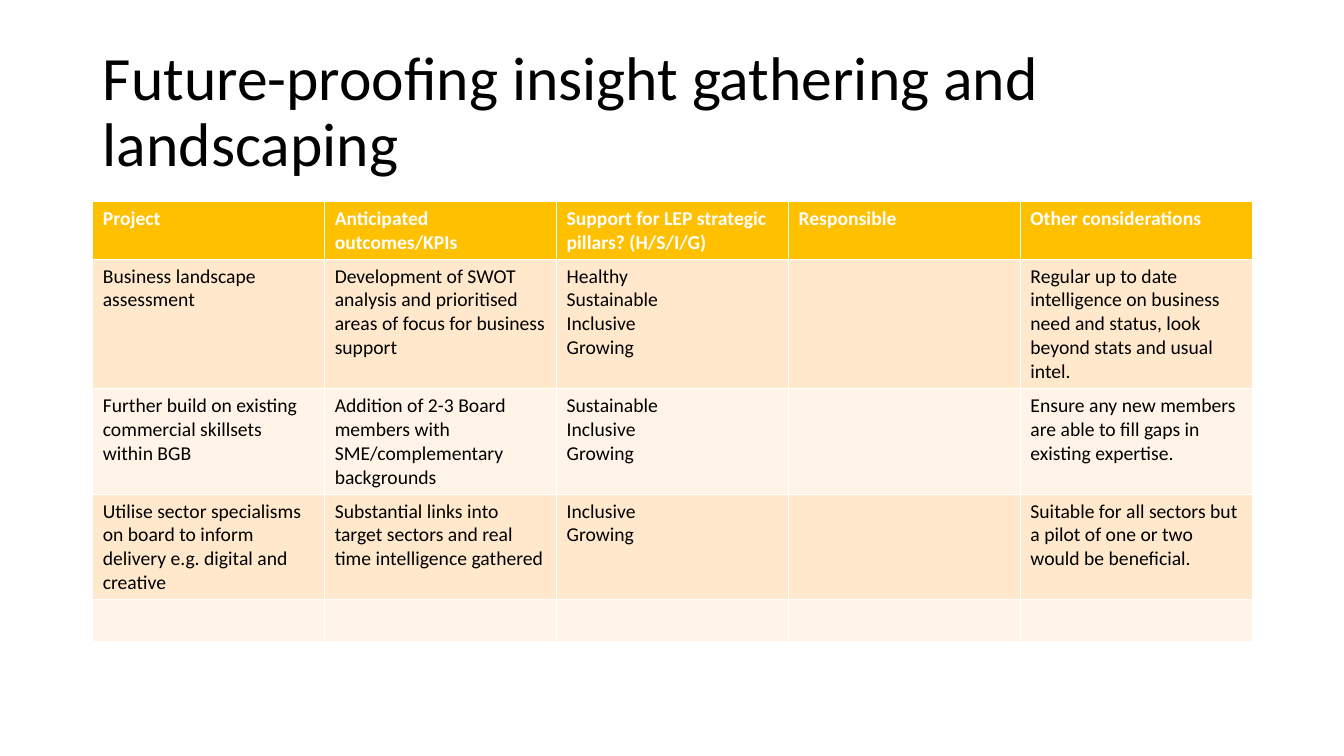
import pptx
import pptx.util
import pptx.dml.color
import pptx.enum.text

Inches = pptx.util.Inches
Pt = pptx.util.Pt
RGBColor = pptx.dml.color.RGBColor

BLACK = RGBColor(0x00, 0x00, 0x00)
WHITE = RGBColor(0xFF, 0xFF, 0xFF)
GOLD = RGBColor(0xFF, 0xC0, 0x00)
PEACH = RGBColor(0xFF, 0xE8, 0xCC)
CREAM = RGBColor(0xFF, 0xF4, 0xE7)
FONT = "Calibri"

ROWS = [
    ["Project", "Anticipated outcomes/KPIs",
     "Support for LEP strategic pillars? (H/S/I/G)",
     "Responsible", "Other considerations"],
    ["Business landscape assessment",
     "Development of SWOT analysis and prioritised areas of focus for business support",
     "Healthy\nSustainable\nInclusive\nGrowing", "",
     "Regular up to date intelligence on business need and status, "
     "look beyond stats and usual intel."],
    ["Further build on existing commercial skillsets within BGB",
     "Addition of 2-3 Board members with SME/complementary backgrounds",
     "Sustainable\nInclusive\nGrowing", "",
     "Ensure any new members are able to fill gaps in existing expertise."],
    ["Utilise sector specialisms on board to inform delivery e.g. digital and creative",
     "Substantial links into target sectors and real time intelligence gathered",
     "Inclusive\nGrowing", "",
     "Suitable for all sectors but a pilot of one or two would be beneficial."],
    [""] * 5,
]


def style(para, size, color, bold=False):
    for run in para.runs:
        run.font.name = FONT
        run.font.size = Pt(size)
        run.font.bold = bold
        run.font.color.rgb = color


deck = pptx.Presentation()
deck.slide_width = Inches(13.33)
deck.slide_height = Inches(7.5)
slide = deck.slides.add_slide(deck.slide_layouts[5])

# Title
title = slide.shapes.title
title.left, title.top = Inches(0.92), Inches(0.4)
title.width, title.height = Inches(11.5), Inches(1.45)
frame = title.text_frame
frame.text = "Future-proofing insight gathering and landscaping"
frame.word_wrap = True
frame.auto_size = pptx.enum.text.MSO_AUTO_SIZE.NONE
frame.vertical_anchor = pptx.enum.text.MSO_ANCHOR.MIDDLE
para = frame.paragraphs[0]
para.alignment = pptx.enum.text.PP_ALIGN.LEFT
para.line_spacing = 0.9
style(para, 44, BLACK)

# Project table: gold header, then alternating bands
table = slide.shapes.add_table(
    len(ROWS), len(ROWS[0]), Inches(0.92), Inches(2),
    Inches(11.5), Inches(0.41 * len(ROWS))).table
for r, row in enumerate(ROWS):
    head = r == 0
    fill = GOLD if head else PEACH if r % 2 else CREAM
    for c, text in enumerate(row):
        cell = table.cell(r, c)
        cell.fill.solid()
        cell.fill.fore_color.rgb = fill
        if not text:
            continue
        cell.text_frame.text = text
        for para in cell.text_frame.paragraphs:
            style(para, 14, WHITE if head else BLACK, head)

deck.save("out.pptx")
